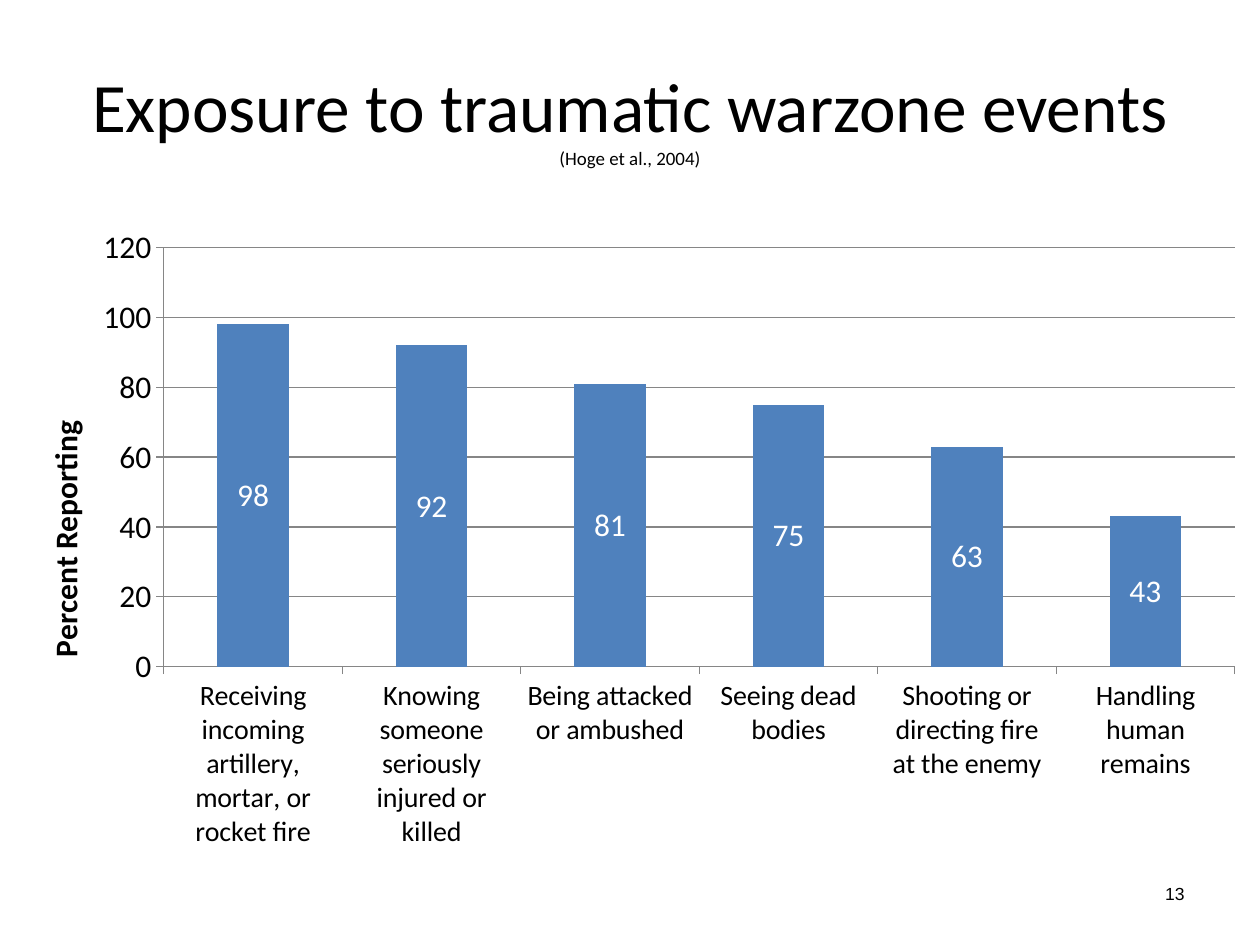
from dataclasses import dataclass

from lxml.etree import SubElement
from pptx import Presentation
from pptx.chart.data import CategoryChartData
from pptx.dml.color import RGBColor
from pptx.enum.chart import XL_CHART_TYPE, XL_LABEL_POSITION, XL_TICK_MARK
from pptx.enum.text import MSO_ANCHOR, PP_ALIGN
from pptx.oxml.ns import qn
from pptx.util import Cm, Pt


@dataclass(frozen=True)
class Theme:
    text: RGBColor = RGBColor(0x00, 0x00, 0x00)
    bar: RGBColor = RGBColor(0x4F, 0x81, 0xBD)
    label: RGBColor = RGBColor(0xFF, 0xFF, 0xFF)
    line: RGBColor = RGBColor(0x86, 0x86, 0x86)
    font: str = "Calibri"
    number_font: str = "Arial"
    title: Pt = Pt(39.6)
    citation: Pt = Pt(10.8)
    chart: Pt = Pt(18)
    category: Pt = Pt(16)
    number: Pt = Pt(10)


theme = Theme()


def add_text(box, text, align, font, sizes):
    """Add a middle-anchored paragraph with one size per run."""
    tf = slide.shapes.add_textbox(*map(Cm, box)).text_frame
    tf.word_wrap = True
    tf.vertical_anchor = MSO_ANCHOR.MIDDLE
    p = tf.paragraphs[0]
    p.text = text
    p.alignment = align
    for r, size in zip(p.runs, sizes):
        r.font.name = font
        r.font.size = size
        r.font.color.rgb = theme.text


def set_layout(parent, index, **settings):
    """Place a chart part by fractions of the chart area."""
    for old in parent.findall(qn("c:layout")):
        parent.remove(old)
    layout = SubElement(parent, qn("c:layout"))
    parent.insert(index, layout)
    manual = SubElement(layout, qn("c:manualLayout"))
    for name, value in settings.items():
        SubElement(manual, qn(f"c:{name}")).set("val", str(value))


prs = Presentation()
prs.slide_width, prs.slide_height = Cm(25.4), Cm(19.05)
slide = prs.slides.add_slide(prs.slide_layouts[6])

# Title and citation
add_text((1.27, 0.76, 22.86, 3.18),
         "Exposure to traumatic warzone events\v(Hoge et al., 2004)",
         PP_ALIGN.CENTER, theme.font, (theme.title, theme.citation))

# Exposure chart
exposure = {
    "Receiving incoming artillery, mortar, or rocket fire": 98,
    "Knowing someone seriously injured or killed": 92,
    "Being attacked or ambushed": 81,
    "Seeing dead bodies": 75,
    "Shooting or directing fire at the enemy": 63,
    "Handling human remains": 43,
}
data = CategoryChartData()
data.categories = list(exposure)
data.add_series("Series 1", list(exposure.values()))
chart = slide.shapes.add_chart(XL_CHART_TYPE.COLUMN_STACKED, Cm(0), Cm(4.34),
                               Cm(25.4), Cm(13), data).chart
chart.has_legend = False
chart.has_title = False
chart.font.name = theme.font
chart.font.size = theme.chart
chart.font.color.rgb = theme.text

plot = chart.plots[0]
plot.vary_by_categories = False
plot.gap_width = 150
plot.overlap = 100
fill = plot.series[0].format.fill
fill.solid()
fill.fore_color.rgb = theme.bar
plot.has_data_labels = True
labels = plot.data_labels
labels.show_value = True
labels.position = XL_LABEL_POSITION.CENTER
labels.font.size = theme.chart
labels.font.color.rgb = theme.label

categories, percent = chart.category_axis, chart.value_axis
for axis in (categories, percent):
    axis.major_tick_mark = XL_TICK_MARK.OUTSIDE
    axis.minor_tick_mark = XL_TICK_MARK.NONE
    axis.format.line.color.rgb = theme.line
categories.tick_labels.font.size = theme.category
percent.minimum_scale, percent.maximum_scale, percent.major_unit = 0, 120, 20
percent.has_major_gridlines = True
percent.major_gridlines.format.line.color.rgb = theme.line

title = percent.axis_title
p = title.text_frame.paragraphs[0]
p.text = "Percent Reporting"
font = p.runs[0].font
font.name, font.size, font.bold = theme.font, theme.chart, True
font.color.rgb = theme.text
title.text_frame._txBody.bodyPr.set("rot", "-5400000")
title.text_frame._txBody.bodyPr.set("vert", "horz")
set_layout(title._element, 1, xMode="edge", yMode="edge", x=0.03, y=0.31)
set_layout(chart._chartSpace.chart.plotArea, 0, layoutTarget="inner",
           xMode="edge", yMode="edge", x=0.13, y=0.05, w=0.85, h=0.65)

# Slide number
add_text((22.02, 17.35, 2.11, 1.32), "13", PP_ALIGN.RIGHT,
         theme.number_font, (theme.number,))

prs.save("out.pptx")
